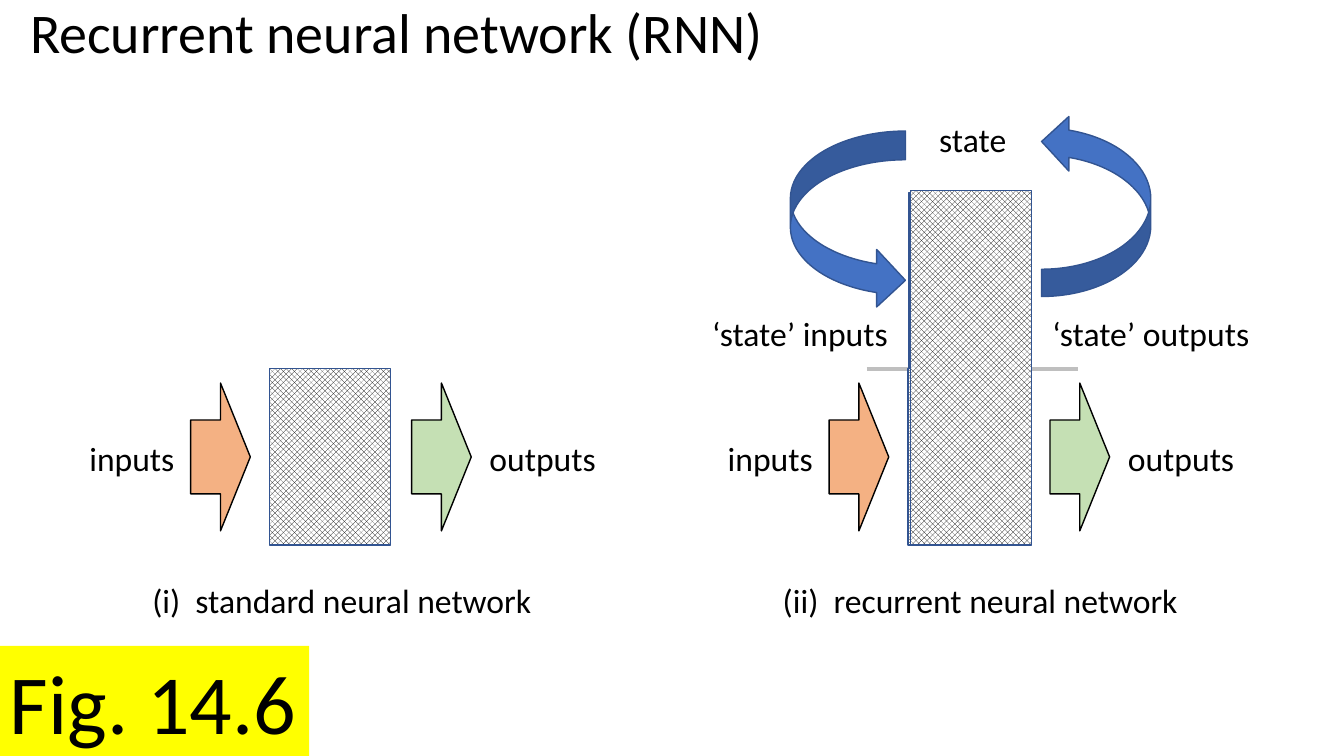
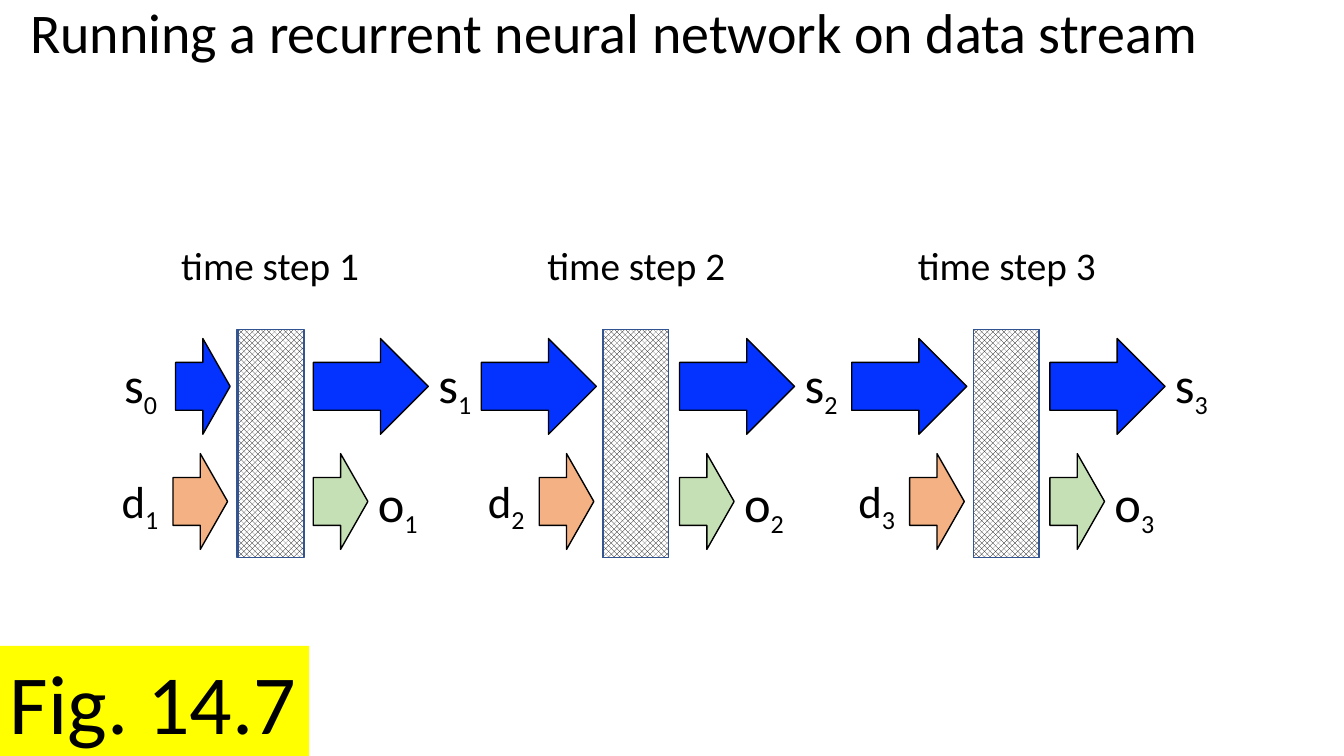
from lxml.etree import SubElement
from pptx import Presentation
from pptx.dml.color import RGBColor
from pptx.enum.dml import MSO_PATTERN_TYPE as Pattern
from pptx.enum.shapes import MSO_CONNECTOR as Connector, MSO_SHAPE as Shape
from pptx.enum.text import MSO_ANCHOR as Anchor, MSO_AUTO_SIZE as AutoSize, PP_ALIGN as Align
from pptx.oxml.ns import qn
from pptx.util import Emu, Pt

COLUMNS, ROWS = 160, 90
CELL = 76200
BLANK_LAYOUT = 6
COLORS = {
    "text": "000000",
    "paper": "FFFFFF",
    "outline": "325491",
    "input": "F4B183",
    "output": "C5E0B4",
    "state": "0432FF",
    "loop": "4472C4",
    "divider": "BFBFBF",
    "badge": "FFFF00",
}
NETWORK_GAP = 76
BLOCK_WIDTH, BLOCK_HEIGHT = 14.4, 21
STEP_COLUMNS = (28.2, 71.8, 115.9)
STEP_TOP, STEP_WIDTH, STEP_HALF = 39.2, 7.8, 13.6
SHORT_ARROW, LONG_ARROW, ARROW_HEIGHT = 6.5, 13.7, 11.4
STATE_ROW, DATA_ROW = 40.3, 54


def cells(*lengths):
    return [Emu(round(length * CELL)) for length in lengths]


def color(name):
    return RGBColor.from_string(COLORS[name])


def add_run(paragraph, text, size, baseline=None):
    run = paragraph.add_run()
    run.text = text
    for attribute, value in {"name": "Calibri", "size": Pt(size)}.items():
        setattr(run.font, attribute, value)
    run.font.color.rgb = color("text")
    if baseline:
        run.font._element.set("baseline", str(baseline))


def write(shape, text, size, align=Align.LEFT, subscript="", wrap=False):
    frame = shape.text_frame
    settings = {
        "word_wrap": wrap,
        "auto_size": AutoSize.NONE if wrap else AutoSize.SHAPE_TO_FIT_TEXT,
        "vertical_anchor": Anchor.TOP,
    }
    for attribute, value in settings.items():
        setattr(frame, attribute, value)
    paragraph = frame.paragraphs[0]
    paragraph.alignment = align
    add_run(paragraph, text, size)
    if subscript:
        add_run(paragraph, subscript, 32, -25000)
    return paragraph


def add_label(slide, box, text, size=24, align=Align.CENTER, subscript=""):
    write(slide.shapes.add_textbox(*cells(*box)), text, size, align, subscript)


def add_figure(slide, kind, box, fill, outline="text"):
    shape = slide.shapes.add_shape(kind, *cells(*box))
    shape.shadow.inherit = False
    if fill == "hatch":
        shape.fill.patterned()
        shape.fill.pattern = Pattern.OUTLINED_DIAMOND
        shape.fill.fore_color.rgb = color("text")
        shape.fill.back_color.rgb = color("paper")
    else:
        shape.fill.solid()
        shape.fill.fore_color.rgb = color(fill)
    if outline:
        shape.line.color.rgb = color(outline)
        shape.line.width = Pt(1)
    else:
        shape.line.fill.background()
    return shape


def add_arrow(slide, box, fill):
    add_figure(slide, Shape.RIGHT_ARROW, box, fill)


def add_block(slide, box):
    add_figure(slide, Shape.RECTANGLE, box, "hatch", "outline")


def add_loop_arrow(slide, box, flip):
    shape = add_figure(slide, Shape.CURVED_LEFT_ARROW, box, "loop", "outline")
    shape._element.spPr.find(qn("a:xfrm")).set(flip, "1")


def add_divider(slide, left, right, row):
    connector = slide.shapes.add_connector(Connector.STRAIGHT, *cells(left, row, right, row))
    connector.line.color.rgb = color("divider")
    connector.line.width = Pt(3)
    SubElement(connector._element.spPr, qn("a:effectLst"))


def add_slide(presentation, title, figure_number):
    slide = presentation.slides.add_slide(presentation.slide_layouts[BLANK_LAYOUT])
    title_box = slide.shapes.add_textbox(*cells(2.4, 0, 155.5, 22.8))
    write(title_box, title, 40, wrap=True).line_spacing = 0.9
    badge = add_figure(slide, Shape.RECTANGLE, (0, 76.9, 36.8, 13.3), "badge", None)
    write(badge, f"Fig. {figure_number}", 60)
    return slide


def add_network(slide, left, caption, caption_width):
    add_block(slide, (left + 32.1, 43.9, BLOCK_WIDTH, BLOCK_HEIGHT))
    add_label(slide, (left + 40.7 - caption_width / 2, 68.5, caption_width, 6), caption)
    add_label(slide, (left + 9.4, 51.5, 12.6, 6), "inputs")
    add_label(slide, (left + 57, 51.5, 15.2, 6), "outputs")
    for arrow_left, fill in ((22.7, "input"), (49, "output")):
        add_arrow(slide, (left + arrow_left, 45.6, 7.1, 17.6), fill)


def add_state_loop(slide):
    add_block(slide, (108.2, 22.9, BLOCK_WIDTH, BLOCK_HEIGHT))
    add_block(slide, (108.4, 22.7, BLOCK_WIDTH, 42.2))
    add_loop_arrow(slide, (94.1, 15.6, 13.7, 21.2), "flipH")
    add_loop_arrow(slide, (124, 13.6, 13, 21.7), "flipV")
    add_label(slide, (110.6, 13.6, 10.4, 6), "state")
    add_label(slide, (83.5, 36.7, 23.5, 6), "‘state’ inputs")
    add_label(slide, (124, 36.7, 26, 6), "‘state’ outputs")


def add_symbol(slide, box, letter, index, size=36):
    add_label(slide, box, letter, size, Align.LEFT, str(index))


def add_time_step(slide, number, left):
    first = number == 1
    for top in (STEP_TOP, STEP_TOP + STEP_HALF):
        add_block(slide, (left, top, STEP_WIDTH, STEP_HALF))
    cover_left = left + 0.2 if first else left
    add_block(slide, (cover_left, STEP_TOP, STEP_WIDTH, 2 * STEP_HALF))
    add_label(slide, (left - 8, 28.1, 23.9, 6.8), f"time step {number}", 28)
    state_width = SHORT_ARROW if first else LONG_ARROW
    arrows = (
        (-0.8 - state_width, STATE_ROW, state_width, "state"),
        (9.1, STATE_ROW, LONG_ARROW, "state"),
        (-7.6, DATA_ROW, SHORT_ARROW, "input"),
        (9.1, DATA_ROW, SHORT_ARROW, "output"),
    )
    for offset, row, width, fill in arrows:
        add_arrow(slide, (left + offset, row, width, ARROW_HEIGHT), fill)
    add_symbol(slide, (left - 14.9, 55.8, 7.1, 7.7), "d", number, 32)
    add_symbol(slide, (left + 15.6, 55.6, 7.4, 8.5), "o", number)
    if first:
        add_symbol(slide, (left - 14.6, 41.4, 6.6, 8.5), "s", 0)
    add_symbol(slide, (left + 22.8, 41.4, 6.6, 8.5), "s", number)


def build_network_comparison(presentation):
    slide = add_slide(presentation, "Recurrent neural network (RNN)", "14.6")
    add_divider(slide, 103.2, 128.3, 43.9)
    add_network(slide, 0, "(i)  standard neural network", 48)
    add_network(slide, NETWORK_GAP, "(ii)  recurrent neural network", 50)
    add_state_loop(slide)


def build_time_steps(presentation):
    slide = add_slide(presentation, "Running a recurrent neural network on data stream", "14.7")
    for number, left in enumerate(STEP_COLUMNS, 1):
        add_time_step(slide, number, left)


def main():
    presentation = Presentation()
    presentation.slide_width, presentation.slide_height = cells(COLUMNS, ROWS)
    build_network_comparison(presentation)
    build_time_steps(presentation)
    presentation.save("out.pptx")


if __name__ == "__main__":
    main()
